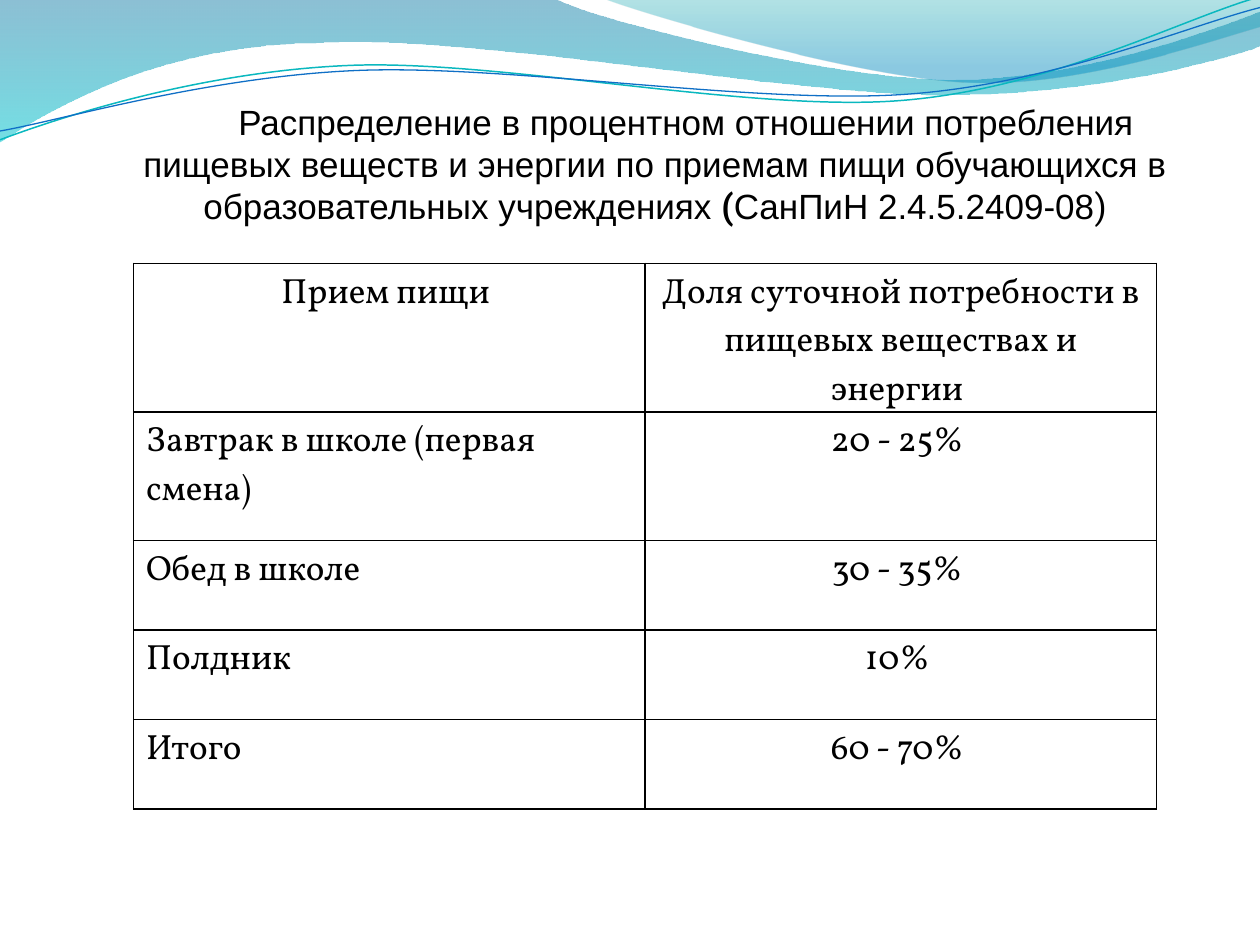
from dataclasses import dataclass
from typing import Optional

import pptx
import pptx.dml.color
import pptx.enum.text
import pptx.oxml
import pptx.oxml.ns
import pptx.util

Inches, Pt = pptx.util.Inches, pptx.util.Pt
PP_ALIGN = pptx.enum.text.PP_ALIGN
qn = pptx.oxml.ns.qn
A_NS = 'xmlns:a="http://schemas.openxmlformats.org/drawingml/2006/main"'

COLORS = {
    "text": "000000",
    "wave_blue": "0074A1",
    "wave_aqua": "00C6CF",
    "crest_teal": "00A1A9",
    "crest_blue": "008BBF",
    "line_teal": "0AB8BF",
    "line_blue": "0F6FC6",
}
UNITS_PER_INCH = 100


@dataclass
class Stop:
    position: int
    color: str
    opacity: int


@dataclass
class Wave:
    """Outline in inches: a pair is a straight step, six numbers are a Bezier."""
    start: tuple
    segments: list
    stops: Optional[list] = None
    line: Optional[str] = None
    width: float = 0


WAVES = [
    Wave((0, -0.01), [
        (4.4, -0.01), (4.76, 0.17, 6.64, 0.63, 7.58, 0.63),
        (8.53, 0.63, 9.58, 0.26, 10, 0.09), (10.01, 0.36),
        (9.83, 0.44, 8.7, 0.76, 7.46, 0.75), (6.22, 0.75, 3.82, 0.28, 2.57, 0.34),
        (1.29, 0.35, 0.46, 0.83, -0.01, 1.13),
    ], stops=[Stop(0, "wave_blue", 45), Stop(100, "wave_aqua", 55)]),
    Wave((4.79, -0.01), [
        (5.09, 0.11, 6.82, 0.62, 7.69, 0.65), (8.56, 0.69, 9.61, 0.32, 10, 0.21),
        (10, 0),
    ], stops=[Stop(0, "crest_teal", 30), Stop(80, "crest_blue", 45)]),
    Wave((0, 1.11), [
        (0.48, 0.93, 1.58, 0.57, 2.77, 0.52), (3.95, 0.47, 5.93, 0.89, 7.13, 0.8),
        (8.33, 0.71, 9.38, 0.15, 9.98, -0.02),
    ], line="line_teal", width=0.85),
    Wave((0, 1.04), [
        (0.47, 0.96, 1.64, 0.61, 2.83, 0.56), (4.03, 0.51, 5.97, 0.83, 7.17, 0.75),
        (8.36, 0.67, 9.41, 0.21, 10, 0.06),
    ], line="line_blue", width=0.75),
]

TITLE_RUNS = [
    ("Распределение в процентном отношении потребления пищевых веществ и энергии "
     "по приемам пищи обучающихся в образовательных учреждениях ", "Arial", False),
    ("(", "Roboto", True),
    ("СанПиН 2.4.5.2409-08", "Arial", False),
    (")", "Roboto", False),
]

MEALS = [
    ("Прием пищи ", "Доля суточной потребности в пищевых веществах и энергии "),
    ("Завтрак в школе (первая смена)", "20 - 25% "),
    ("Обед в школе", "30 - 35% "),
    ("Полдник", "10% "),
    ("Итого", "60 - 70% "),
]
ROW_HEIGHTS = [1.18, 1.02, 0.71, 0.71, 0.71]


def rgb(name: str) -> pptx.dml.color.RGBColor:
    return pptx.dml.color.RGBColor.from_string(COLORS[name])


def bend_segments(sp, segments: list, left: int, top: int) -> None:
    """Turn the straight steps into Bezier curves where a segment has controls."""
    steps = list(sp.element.iter(qn("a:lnTo")))
    for step, seg in zip(steps, segments):
        if len(seg) == 6:
            pts = "".join(f'<a:pt x="{x - left}" y="{y - top}"/>'
                          for x, y in zip(seg[::2], seg[1::2]))
            curve = pptx.oxml.parse_xml(f"<a:cubicBezTo {A_NS}>{pts}</a:cubicBezTo>")
            step.getparent().replace(step, curve)


def fill_gradient(sp, stops: list) -> None:
    """Vertical gradient whose stops are partly transparent."""
    gs = "".join(
        f'<a:gs pos="{s.position * 1000}"><a:srgbClr val="{COLORS[s.color]}">'
        f'<a:alpha val="{s.opacity * 1000}"/></a:srgbClr></a:gs>' for s in stops)
    grad = pptx.oxml.parse_xml(
        f'<a:gradFill {A_NS}><a:gsLst>{gs}</a:gsLst><a:lin ang="5400000" scaled="0"/></a:gradFill>')
    sp.element.spPr.find(qn("a:custGeom")).addnext(grad)


def add_wave(slide, wave: Wave) -> None:
    start, *segments = [tuple(round(v * UNITS_PER_INCH) for v in seg)
                        for seg in (wave.start, *wave.segments)]
    anchors = [start] + [seg[-2:] for seg in segments]
    builder = slide.shapes.build_freeform(*start, scale=Inches(1) / UNITS_PER_INCH)
    builder.add_line_segments(anchors[1:], close=wave.stops is not None)
    sp = builder.convert_to_shape()
    bend_segments(sp, segments, min(x for x, _ in anchors), min(y for _, y in anchors))
    sp.shadow.inherit = False
    if wave.stops:
        sp.line.fill.background()
        fill_gradient(sp, wave.stops)
    else:
        sp.fill.background()
        sp.line.color.rgb = rgb(wave.line)
        sp.line.width = Pt(wave.width)


def add_title(slide) -> None:
    tf = slide.shapes.add_textbox(Inches(0.75), Inches(0.76), Inches(8.9), Inches(1.08)).text_frame
    tf.word_wrap = True
    tf.vertical_anchor = pptx.enum.text.MSO_ANCHOR.MIDDLE
    p = tf.paragraphs[0]
    p.alignment = PP_ALIGN.CENTER
    p.font.size = Pt(20)
    p.font.color.rgb = rgb("text")
    p._p.get_or_add_pPr().set("indent", str(Inches(0.49)))
    for text, font, bold in TITLE_RUNS:
        r = p.add_run()
        r.text = text
        r.font.name = font
        r.font.bold = bold


def set_borders(cell) -> None:
    tc_pr = cell._tc.get_or_add_tcPr()
    for i, side in enumerate(("lnL", "lnR", "lnT", "lnB")):
        tc_pr.insert(i, pptx.oxml.parse_xml(
            f'<a:{side} {A_NS} w="{Pt(1)}"><a:solidFill>'
            f'<a:srgbClr val="{COLORS["text"]}"/></a:solidFill></a:{side}>'))


def add_meal_table(slide) -> None:
    table = slide.shapes.add_table(len(MEALS), 2, Inches(1.06), Inches(2.09),
                                   Inches(8.12), Inches(sum(ROW_HEIGHTS))).table
    table.first_row = table.horz_banding = False
    for row, height, texts in zip(table.rows, ROW_HEIGHTS, MEALS):
        row.height = Inches(height)
        for col, (cell, text) in enumerate(zip(row.cells, texts)):
            cell.fill.background()
            set_borders(cell)
            p = cell.text_frame.paragraphs[0]
            p.text = text
            centred = col == 1 or texts is MEALS[0]
            p.alignment = PP_ALIGN.CENTER if centred else PP_ALIGN.LEFT
            p.font.name = "Vollkorn"
            p.font.size = Pt(20)
            p.font.color.rgb = rgb("text")


def main() -> None:
    prs = pptx.Presentation()
    prs.slide_width, prs.slide_height = Inches(10), Inches(7.5)
    slide = prs.slides.add_slide(prs.slide_layouts[6])

    # Decorative waves along the top edge
    for wave in WAVES:
        add_wave(slide, wave)

    # Heading and table of meals
    add_title(slide)
    add_meal_table(slide)

    prs.save("out.pptx")


if __name__ == "__main__":
    main()
